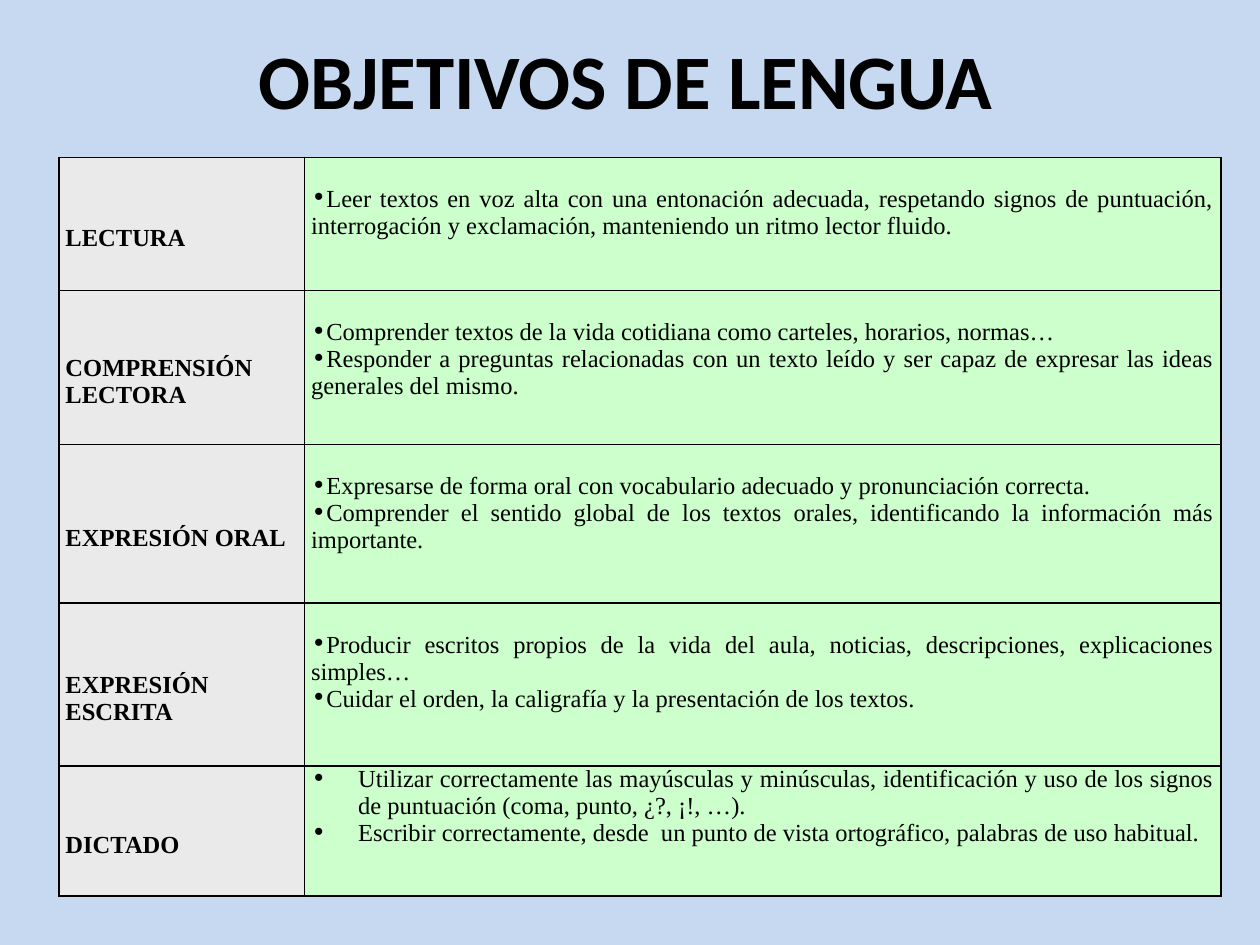
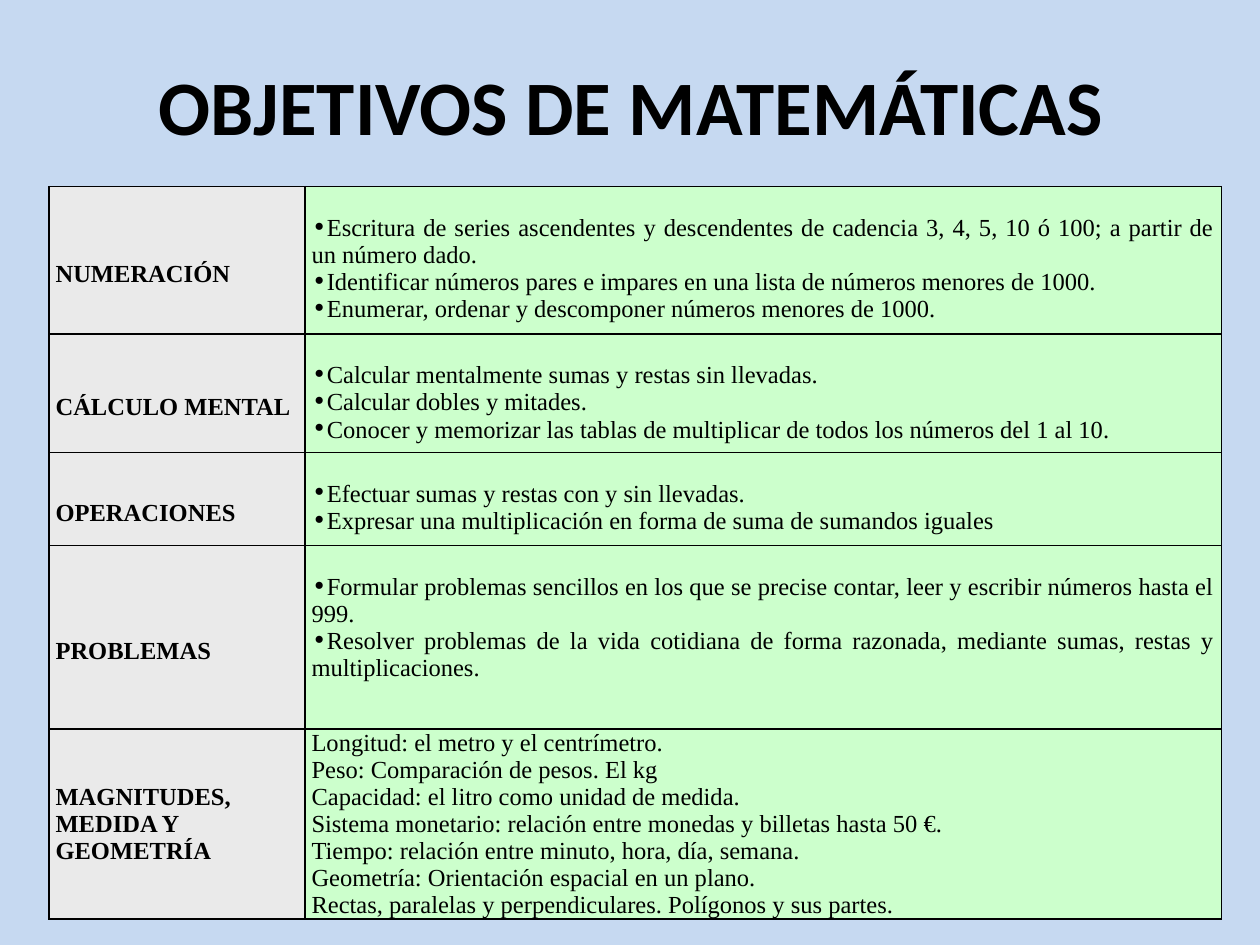
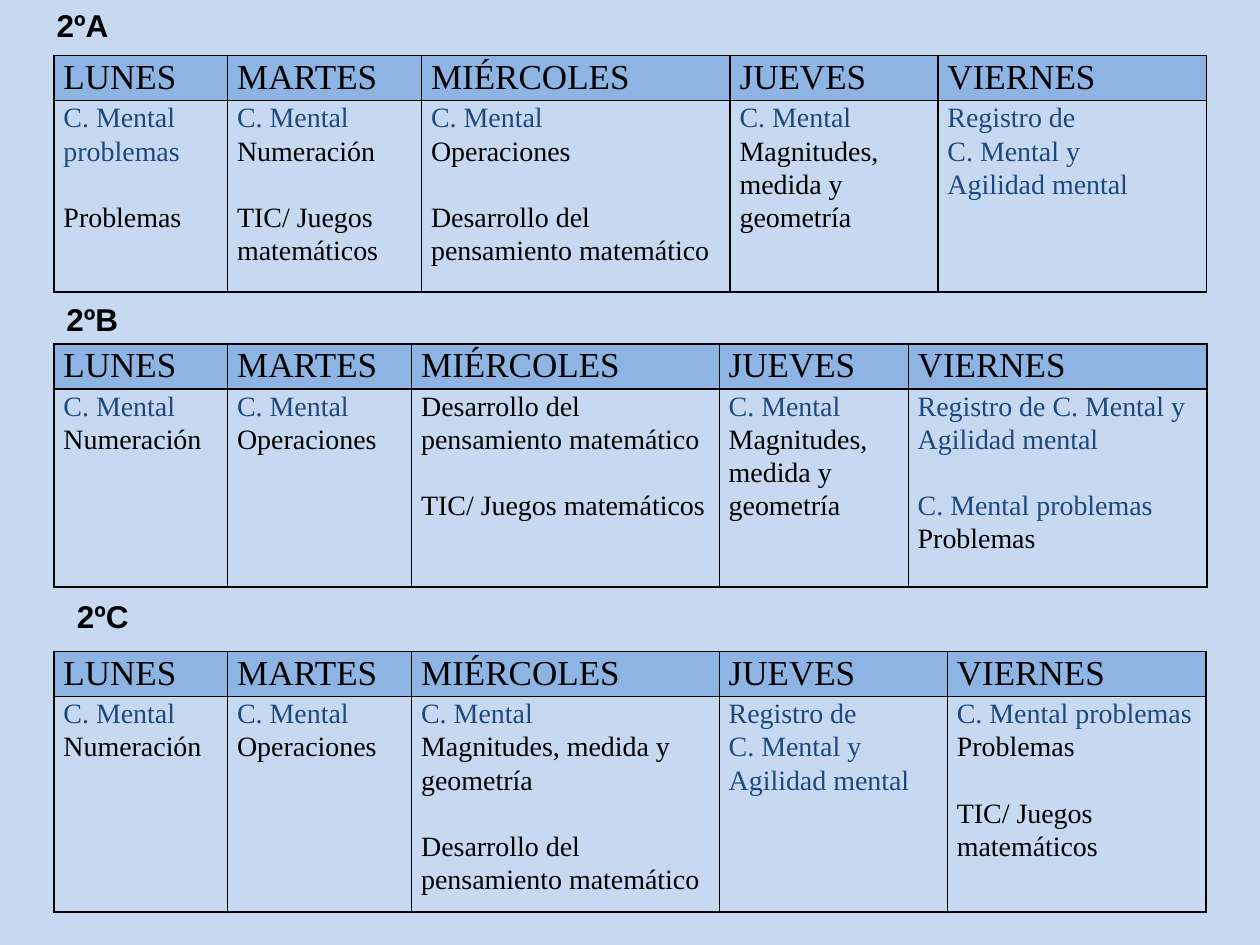
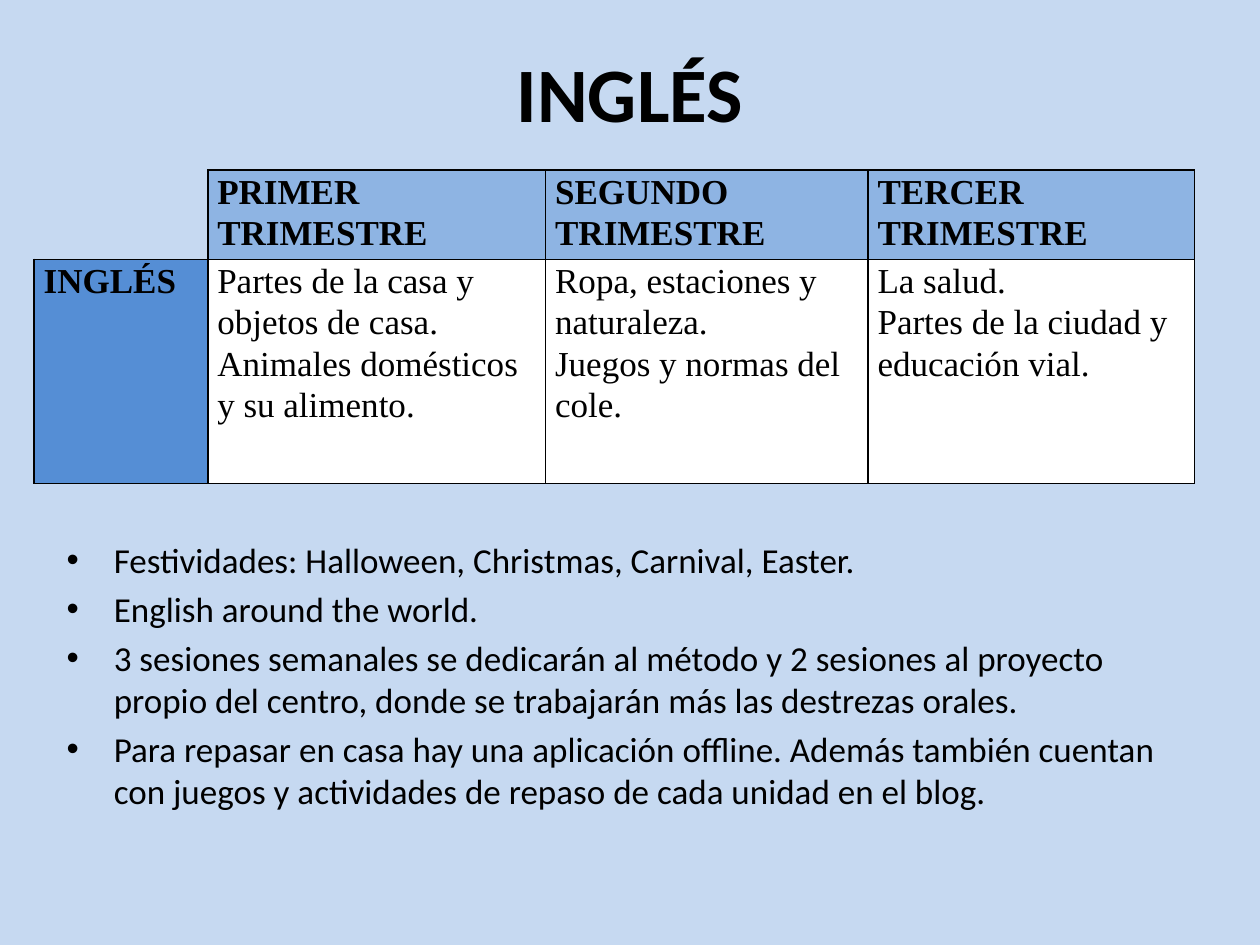
import pptx
import pptx.util
import pptx.dml.color
import pptx.enum.text
import pptx.oxml
import pptx.oxml.ns

Cm = pptx.util.Cm
Pt = pptx.util.Pt
RGBColor = pptx.dml.color.RGBColor
ALIGN = pptx.enum.text.PP_ALIGN
ANCHOR = pptx.enum.text.MSO_ANCHOR

SKY = RGBColor(0xC6, 0xD9, 0xF1)
HEAD = RGBColor(0x8E, 0xB4, 0xE3)
SIDE = RGBColor(0x55, 0x8E, 0xD5)
NAVY = RGBColor(0x1F, 0x49, 0x7D)
GRAY = RGBColor(0xEA, 0xEA, 0xEA)
GREEN = RGBColor(0xCC, 0xFF, 0xCC)
WHITE = RGBColor(0xFF, 0xFF, 0xFF)
BLACK = RGBColor(0, 0, 0)

SERIF = "Times New Roman"
LEAD = 0.57
HANG = 0.95
TIGHT = 0.02

GOALS = [
    {
        "title": "OBJETIVOS DE LENGUA",
        "box": (1.19, 0, 22.86, 3.17),
        "at": (1.19, 3.17),
        "cols": (4.95, 18.47),
        "rows": [
            (2.69, "LECTURA", LEAD, LEAD, TIGHT, [
                "Leer textos en voz alta con una entonación adecuada, respetando signos de puntuación, interrogación y exclamación, manteniendo un ritmo lector fluido.",
            ]),
            (3.1, "COMPRENSIÓN LECTORA", LEAD, LEAD, TIGHT, [
                "Comprender textos de la vida cotidiana como carteles, horarios, normas…",
                "Responder a preguntas relacionadas con un texto leído y ser capaz de expresar las ideas generales del mismo.",
            ]),
            (3.2, "EXPRESIÓN ORAL", LEAD, LEAD, TIGHT, [
                "Expresarse de forma oral con vocabulario adecuado y pronunciación correcta.",
                "Comprender el sentido global de los textos orales, identificando la información más importante.",
            ]),
            (3.28, "EXPRESIÓN ESCRITA", LEAD, LEAD, TIGHT, [
                "Producir escritos propios de la vida del aula, noticias, descripciones, explicaciones simples…",
                "Cuidar el orden, la caligrafía y la presentación de los textos.",
            ]),
            (2.62, "DICTADO", LEAD, 0, HANG, [
                "Utilizar correctamente las mayúsculas y minúsculas, identificación y uso de los signos de puntuación (coma, punto, ¿?, ¡!, …).",
                "Escribir correctamente, desde  un punto de vista ortográfico, palabras de uso habitual.",
            ]),
        ],
    },
    {
        "title": "OBJETIVOS DE MATEMÁTICAS",
        "box": (1.3, 0.53, 22.86, 3.17),
        "at": (0.99, 3.76),
        "cols": (5.16, 18.47),
        "rows": [
            (2.97, "NUMERACIÓN", LEAD, LEAD, TIGHT, [
                "Escritura de series ascendentes y descendentes de cadencia 3, 4, 5, 10 ó 100; a partir de un número dado.",
                "Identificar números pares e impares en una lista de números menores de 1000.",
                "Enumerar, ordenar y descomponer números menores de 1000.",
            ]),
            (2.39, "CÁLCULO MENTAL", LEAD, LEAD, TIGHT, [
                "Calcular mentalmente sumas y restas sin llevadas.",
                "Calcular dobles y mitades.",
                "Conocer y memorizar las tablas de multiplicar de todos los números del 1 al 10.",
            ]),
            (1.88, "OPERACIONES", LEAD, LEAD, TIGHT, [
                "Efectuar sumas y restas con y sin llevadas.",
                "Expresar una multiplicación en forma de suma de sumandos iguales",
            ]),
            (3.7, "PROBLEMAS", LEAD, LEAD, TIGHT, [
                "Formular problemas sencillos en los que se precise contar, leer y escribir números hasta el 999.",
                "Resolver problemas de la vida cotidiana de forma razonada, mediante sumas, restas y multiplicaciones.",
            ]),
            (3.71, "MAGNITUDES, MEDIDA Y GEOMETRÍA", 0, 0, 0, [
                "Longitud: el metro y el centrímetro.",
                "Peso: Comparación de pesos. El kg",
                "Capacidad: el litro como unidad de medida.",
                "Sistema monetario: relación entre monedas y billetas hasta 50 €.",
                "Tiempo: relación entre minuto, hora, día, semana.",
                "Geometría: Orientación espacial en un plano.",
                "Rectas, paralelas y perpendiculares. Polígonos y sus partes.",
            ]),
        ],
    },
]

DAYS = ["LUNES", "MARTES", "MIÉRCOLES", "JUEVES", "VIERNES"]
MENTAL = ("C. Mental", "Registro", "Agilidad")
WEEKS = [
    ("2ºA", (0.89, 0, 1.8, 1.02), 1.12, (3.5, 3.91, 6.22, 4.19, 5.41), 3.86, [
        "C. Mental problemas\n\nProblemas",
        "C. Mental\nNumeración\n\nTIC/ Juegos matemáticos",
        "C. Mental\nOperaciones\n\nDesarrollo del pensamiento matemático",
        "C. Mental\nMagnitudes, medida y geometría",
        "Registro de\nC. Mental y\nAgilidad mental",
    ]),
    ("2ºB", (1.09, 5.92, 1.6, 1.02), 6.93, (3.5, 3.71, 6.2, 3.81, 6.02), 3.99, [
        "C. Mental\nNumeración",
        "C. Mental\nOperaciones",
        "Desarrollo del pensamiento matemático\n\nTIC/ Juegos matemáticos",
        "C. Mental\nMagnitudes, medida y geometría",
        "Registro de C. Mental y\nAgilidad mental\n\nC. Mental problemas\nProblemas",
    ]),
    ("2ºC", (1.3, 11.91, 1.6, 1.02), 13.13, (3.5, 3.71, 6.2, 4.6, 5.21), 4.34, [
        "C. Mental\nNumeración",
        "C. Mental\nOperaciones",
        "C. Mental\nMagnitudes, medida y geometría\n\nDesarrollo del pensamiento matemático",
        "Registro de\nC. Mental y\nAgilidad mental",
        "C. Mental problemas\nProblemas\n\nTIC/ Juegos matemáticos",
    ]),
]

TERMS = [
    ("PRIMER TRIMESTRE", "Partes de la casa y objetos de casa.\nAnimales domésticos y su alimento."),
    ("SEGUNDO TRIMESTRE", "Ropa, estaciones y naturaleza.\nJuegos y normas del cole."),
    ("TERCER TRIMESTRE", "La salud.\nPartes de la ciudad y educación vial."),
]
NOTES = [
    "Festividades: Halloween, Christmas, Carnival, Easter.",
    "English around the world.",
    "3 sesiones semanales se dedicarán al método y 2 sesiones al proyecto propio del centro, donde se trabajarán más las destrezas orales.",
    "Para repasar en casa hay una aplicación offline. Además también cuentan con juegos y actividades de repaso de cada unidad en el blog.",
]


def place(shape, box):
    shape.left, shape.top, shape.width, shape.height = map(Cm, box)


def style(para, face, size, bold=False, color=BLACK):
    font = para.font
    font.name, font.size, font.bold = face, Pt(size), bold
    font.color.rgb = color


def add_xml(parent, body, spot=None):
    node = pptx.oxml.parse_xml(body.replace(" ", f" {pptx.oxml.ns.nsdecls('a')} ", 1))
    parent.insert(len(parent) if spot is None else spot, node)


def bullet(para, mark, hang, left):
    props = para._p.get_or_add_pPr()
    props.set("marL", str(Cm(left)))
    props.set("indent", str(-Cm(hang)))
    add_xml(props, f'<a:buClr ><a:srgbClr val="{BLACK}"/></a:buClr>')
    add_xml(props, f'<a:buChar char="{mark}"/>')


def border(cell, sides="LRTB"):
    for spot, side in enumerate("LRTB"):
        fill = f'<a:solidFill><a:srgbClr val="{BLACK}"/></a:solidFill>' if side in sides else "<a:noFill/>"
        add_xml(cell._tc.get_or_add_tcPr(), f'<a:ln{side} w="12700">{fill}</a:ln{side}>', spot)


def add_grid(slide, at, cols, rows):
    size = (sum(cols), sum(rows))
    frame = slide.shapes.add_table(len(rows), len(cols), *map(Cm, at + size))
    grid = frame.table
    grid.first_row = grid.horz_banding = False
    for col, width in zip(grid.columns, cols):
        col.width = Cm(width)
    for row, height in zip(grid.rows, rows):
        row.height = Cm(height)
    return grid


def fill_cell(cell, lines, color, pad, lead=0):
    cell.margin_left = cell.margin_right = Cm(pad)
    cell.margin_top, cell.margin_bottom = Cm(lead), 0
    if color is None:
        cell.fill.background()
    else:
        cell.fill.solid()
        cell.fill.fore_color.rgb = color
    border(cell)
    cell.text_frame.text = "\n".join(lines)
    return cell.text_frame.paragraphs


def fill_plan(cell, text, color, size, bold=False):
    blocks = [block.split("\n") for block in text.split("\n\n")]
    lines = [line for block in blocks for line in block]
    starts = [i == 0 for block in blocks for i in range(len(block))]
    for i, para in enumerate(fill_cell(cell, lines, color, 0.19)):
        para.line_spacing = 1.07
        if i and starts[i]:
            para.space_before = Pt(19)
        style(para, SERIF, size, bold, NAVY if lines[i].startswith(MENTAL) else BLACK)


def add_title(slide, text, box):
    title = slide.shapes.title
    place(title, box)
    title.text_frame.text = text
    title.text_frame.vertical_anchor = ANCHOR.MIDDLE
    para = title.text_frame.paragraphs[0]
    para.alignment = ALIGN.CENTER
    style(para, "Calibri", 44, True)


def add_goals(deck, goal):
    slide = deck.slides.add_slide(deck.slide_layouts[5])
    add_title(slide, goal["title"], goal["box"])
    grid = add_grid(slide, goal["at"], goal["cols"], [row[0] for row in goal["rows"]])
    for i, (_, name, drop, lead, hang, items) in enumerate(goal["rows"]):
        side, main = grid.cell(i, 0), grid.cell(i, 1)
        style(fill_cell(side, [name], GRAY, 0.13, drop)[0], SERIF, 14, True)
        side.vertical_anchor = ANCHOR.MIDDLE
        for para in fill_cell(main, items, GREEN, 0.13, lead):
            if hang:
                para.alignment = ALIGN.JUSTIFY
                bullet(para, "∙", hang, hang if hang == HANG else 0)
            style(para, SERIF, 14)


def add_weeks(deck):
    slide = deck.slides.add_slide(deck.slide_layouts[6])
    for name, box, top, cols, height, plans in WEEKS:
        grid = add_grid(slide, (1.09, top), cols, (0.91, height))
        for i, (day, plan) in enumerate(zip(DAYS, plans)):
            fill_plan(grid.cell(0, i), day, HEAD, 20)
            fill_plan(grid.cell(1, i), plan, None, 16)
        label = slide.shapes.add_textbox(*map(Cm, box)).text_frame
        label.word_wrap = True
        label.text = name
        style(label.paragraphs[0], "Arial", 18, True)


def add_terms(deck):
    slide = deck.slides.add_slide(deck.slide_layouts[1])
    add_title(slide, "INGLÉS", (1.27, 0.76, 22.86, 2.16))
    body = slide.placeholders[1]
    place(body, (1.09, 10.72, 22.86, 5.59))
    body.text_frame.text = "\n".join(NOTES)
    for i, para in enumerate(body.text_frame.paragraphs):
        bullet(para, "•", HANG, HANG)
        para.space_before = Pt(4 if i else 0)
        style(para, "Calibri", 20)
    grid = add_grid(slide, (0.69, 3.43), (3.5, 6.81, 6.5, 6.58), (1.8, 4.52))
    corner = grid.cell(0, 0)
    corner.fill.background()
    border(corner, "RB")
    fill_plan(grid.cell(1, 0), "INGLÉS", SIDE, 20, True)
    for i, (term, topics) in enumerate(TERMS, 1):
        fill_plan(grid.cell(0, i), term, HEAD, 20, True)
        fill_plan(grid.cell(1, i), topics, WHITE, 20)


def main():
    deck = pptx.Presentation()
    deck.slide_width, deck.slide_height = Cm(25.4), Cm(19.05)
    back = deck.slide_master.background.fill
    back.solid()
    back.fore_color.rgb = SKY
    for goal in GOALS:
        add_goals(deck, goal)
    add_weeks(deck)
    add_terms(deck)
    deck.save("out.pptx")


if __name__ == "__main__":
    main()
